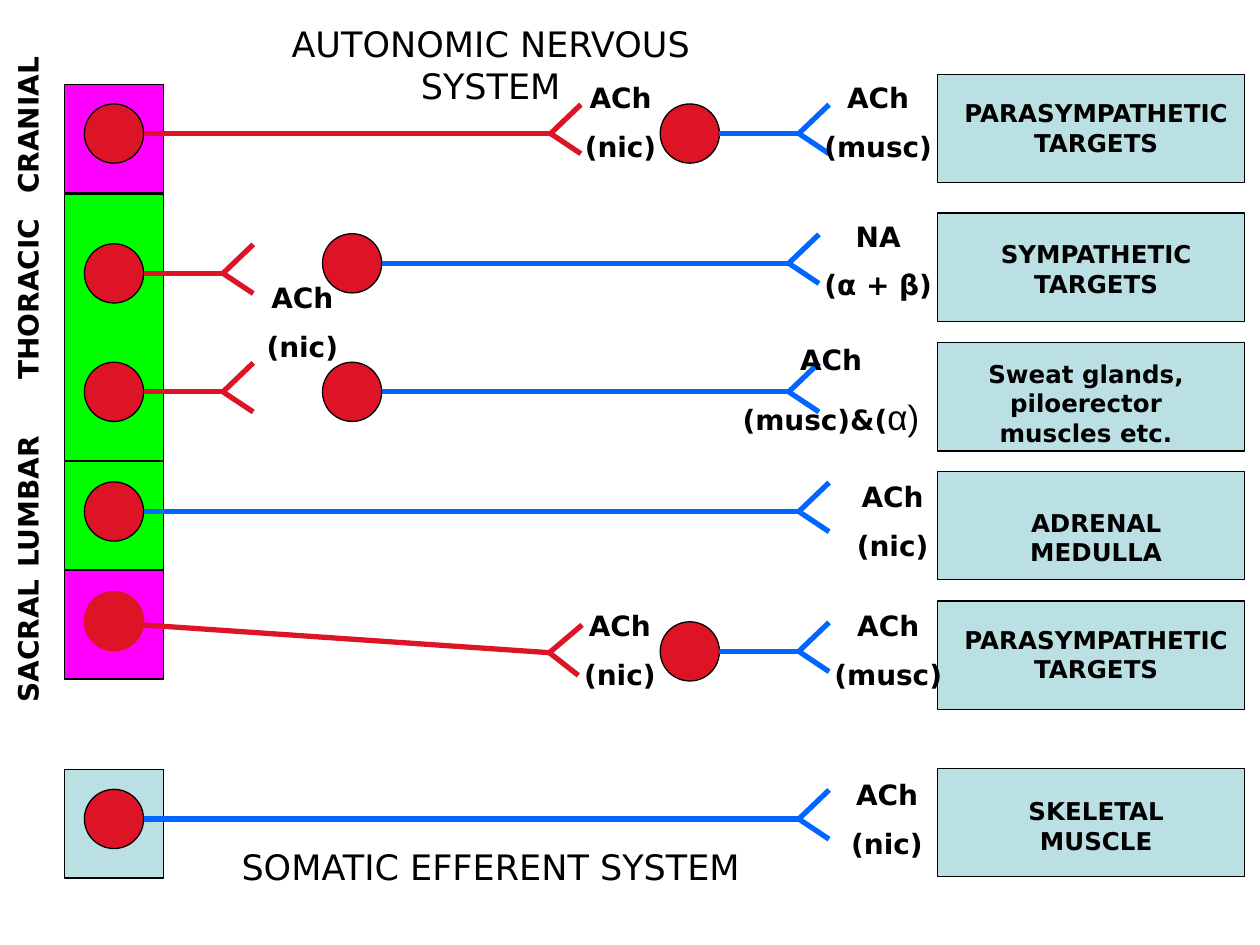
from pptx import Presentation
from pptx.dml.color import RGBColor
from pptx.enum import shapes, text
from pptx.oxml import parse_xml
from pptx.oxml.ns import nsdecls
from pptx.util import Inches, Pt

COLORS = {
    "ink": "000000",
    "cell": "DD1326",
    "blue": "0066FF",
    "sympathetic": "00FF00",
    "parasympathetic": "FF00FF",
    "pale": "BBE0E3",
}
FONT = "DejaVu Sans"
CELL = 0.47
FORK = ((0.24, -0.23), (0.24, 0.16))


def color(name):
    return RGBColor.from_string(COLORS[name])


def add_solid(slide, kind, box, fill, outline="ink"):
    solid = slide.shapes.add_shape(kind, *map(Inches, box))
    solid.shadow.inherit = False
    solid.fill.solid()
    solid.fill.fore_color.rgb = color(fill)
    solid.line.color.rgb = color(outline)
    solid.line.width = Pt(0.75)


def add_fiber(slide, start, end, stroke):
    fiber = slide.shapes.add_connector(
        shapes.MSO_CONNECTOR.STRAIGHT, *map(Inches, (*start, *end)))
    fiber.line.color.rgb = color(stroke)
    fiber.line.width = Pt(3)
    fiber._element.spPr.append(parse_xml(f"<a:effectLst {nsdecls('a')}/>"))


def add_run(paragraph, wording, size, bold, font=FONT):
    run = paragraph.add_run()
    run.text = wording
    run.font.name = font
    run.font.size = Pt(size)
    run.font.bold = bold
    run.font.color.rgb = color("ink")


def add_label(slide, box, lines, size, bold=True, gap=8.7, rotation=0):
    label = slide.shapes.add_textbox(*map(Inches, box))
    label.rotation = rotation
    frame = label.text_frame
    frame.word_wrap = True
    frame.auto_size = text.MSO_AUTO_SIZE.SHAPE_TO_FIT_TEXT
    for index, line in enumerate(lines):
        paragraph = frame.add_paragraph() if index else frame.paragraphs[0]
        paragraph.alignment = text.PP_ALIGN.CENTER
        if index:
            paragraph.space_before = Pt(gap)
        add_run(paragraph, line, size, bold)
    return label


def draw_title(slide, box):
    title = slide.shapes.title
    title.left, title.top, title.width, title.height = map(Inches, box)
    frame = title.text_frame
    frame.word_wrap = True
    frame.auto_size = text.MSO_AUTO_SIZE.NONE
    frame.vertical_anchor = text.MSO_ANCHOR.TOP
    paragraph = frame.paragraphs[0]
    paragraph.alignment = text.PP_ALIGN.CENTER
    add_run(paragraph, "AUTONOMIC NERVOUS SYSTEM", 20, False)


def draw_spinal_cord(slide, box):
    left, top, width, _ = box
    # Segments: offset from the top, height, fill
    for offset, height, fill in (
        (0.87, 2.13, "sympathetic"),
        (2.99, 0.86, "sympathetic"),
        (0, 0.86, "parasympathetic"),
        (3.86, 0.86, "parasympathetic"),
        (5.44, 0.86, "pale"),
    ):
        add_solid(slide, shapes.MSO_SHAPE.RECTANGLE,
                  (left, top + offset, width, height), fill)
    # Region names, read upwards: centre offset, length
    for name, middle, length in (
        ("CRANIAL", 0.33, 1.42),
        ("THORACIC", 1.71, 1.65),
        ("LUMBAR", 3.32, 1.42),
        ("SACRAL", 4.42, 1.42),
    ):
        add_label(slide, (left - 0.29 - length / 2, top + middle - 0.19, length, 0.37),
                  [name], 16, rotation=270)


def draw_neuron(slide, left, middle, tip_x, stroke, outline="ink",
                axon_y=None, tip_y=None, fork=FORK):
    axon_y = axon_y or middle
    tip = (tip_x, tip_y or middle)
    add_solid(slide, shapes.MSO_SHAPE.OVAL,
              (left, middle - CELL / 2, CELL, CELL), "cell", outline)
    add_fiber(slide, (left + CELL, axon_y), tip, stroke)
    for dx, dy in fork:
        add_fiber(slide, tip, (tip[0] + dx, tip[1] + dy), stroke)


def draw_pathways(slide, box):
    left, top, _, _ = box
    ganglion, chain = left + 4.57, left + 1.89
    # Neurons starting in the cord
    draw_neuron(slide, left, top + 0.23, 4.37, "cell")
    draw_neuron(slide, left, top + 4.1, 4.36, "cell", "cell",
                axon_y=4.96, tip_y=5.18, fork=((0.26, -0.22), (0.23, 0.18)))
    for middle in (1.34, 2.28):
        draw_neuron(slide, left, top + middle, 1.77, "cell")
    for middle in (3.23, 5.67):
        draw_neuron(slide, left, top + middle, 6.34, "blue")
    # Postganglionic neurons
    for middle in (0.23, 4.34):
        draw_neuron(slide, ganglion, top + middle, 6.34, "blue")
    for middle in (1.26, 2.28):
        draw_neuron(slide, chain, top + middle, 6.26, "blue")


def draw_targets(slide, box):
    left, top, width, _ = box
    # Box offset, name, then the name's left offset, top offset, width and height
    for offset, name, dx, dy, name_width, name_height in (
        (0, "PARASYMPATHETIC TARGETS", 0, 0.14, 2.52, 0.57),
        (1.1, "SYMPATHETIC TARGETS", 0.16, 0.16, 2.2, 0.57),
        (2.13, "Sweat glands, piloerector muscles etc.", 0.08, 0.08, 2.2, 0.8),
        (3.15, "ADRENAL MEDULLA", 0.16, 0.24, 2.2, 0.57),
        (4.18, "PARASYMPATHETIC TARGETS", 0, 0.14, 2.52, 0.57),
        (5.51, "SKELETAL MUSCLE", 0.16, 0.17, 2.2, 0.57),
    ):
        row = top + offset
        add_solid(slide, shapes.MSO_SHAPE.RECTANGLE, (left, row, width, 0.86), "pale")
        add_label(slide, (left + dx, row + dy, name_width, name_height), [name], 14)


def draw_transmitters(slide, box):
    left, top, _, _ = box
    # Left offset, top offset, width, transmitter, receptor
    for dx, dy, width, transmitter, receptor in (
        (0, 1.59, 0.94, "ACh", "(nic)"),
        (2.52, 0, 0.95, "ACh", "(nic)"),
        (4.49, 0, 1.1, "ACh", "(musc)"),
        (4.72, 3.17, 0.87, "ACh", "(nic)"),
        (4.57, 4.19, 1.1, "ACh", "(musc)"),
        (2.52, 4.19, 0.94, "ACh", "(nic)"),
        (4.64, 5.53, 0.94, "ACh", "(nic)"),
        (4.49, 1.1, 1.1, "NA", "(α + β)"),
    ):
        add_label(slide, (left + dx, top + dy, width, 0.77), [transmitter, receptor], 16)
    # Sweat gland receptors mix two fonts
    sweat = add_label(slide, (left + 3.24, top + 2.08, 2.85, 2.47),
                      ["ACh", "(musc)&("], 16, gap=11)
    add_run(sweat.text_frame.paragraphs[1], "α)", 20, False, "Arial")


def main():
    deck = Presentation()
    deck.slide_width, deck.slide_height = Inches(10), Inches(7.5)
    slide = deck.slides.add_slide(deck.slide_layouts[5])
    draw_title(slide, (1.77, 0.13, 4.25, 0.77))
    draw_spinal_cord(slide, (0.51, 0.67, 0.79, 6.3))
    draw_pathways(slide, (0.67, 0.83, 5.9, 5.9))
    draw_targets(slide, (7.44, 0.59, 2.44, 6.37))
    draw_transmitters(slide, (1.93, 0.59, 5.67, 6.3))
    add_label(slide, (1.77, 6.66, 4.25, 0.77), ["SOMATIC EFFERENT SYSTEM"], 20, bold=False)
    deck.save("out.pptx")


if __name__ == "__main__":
    main()
